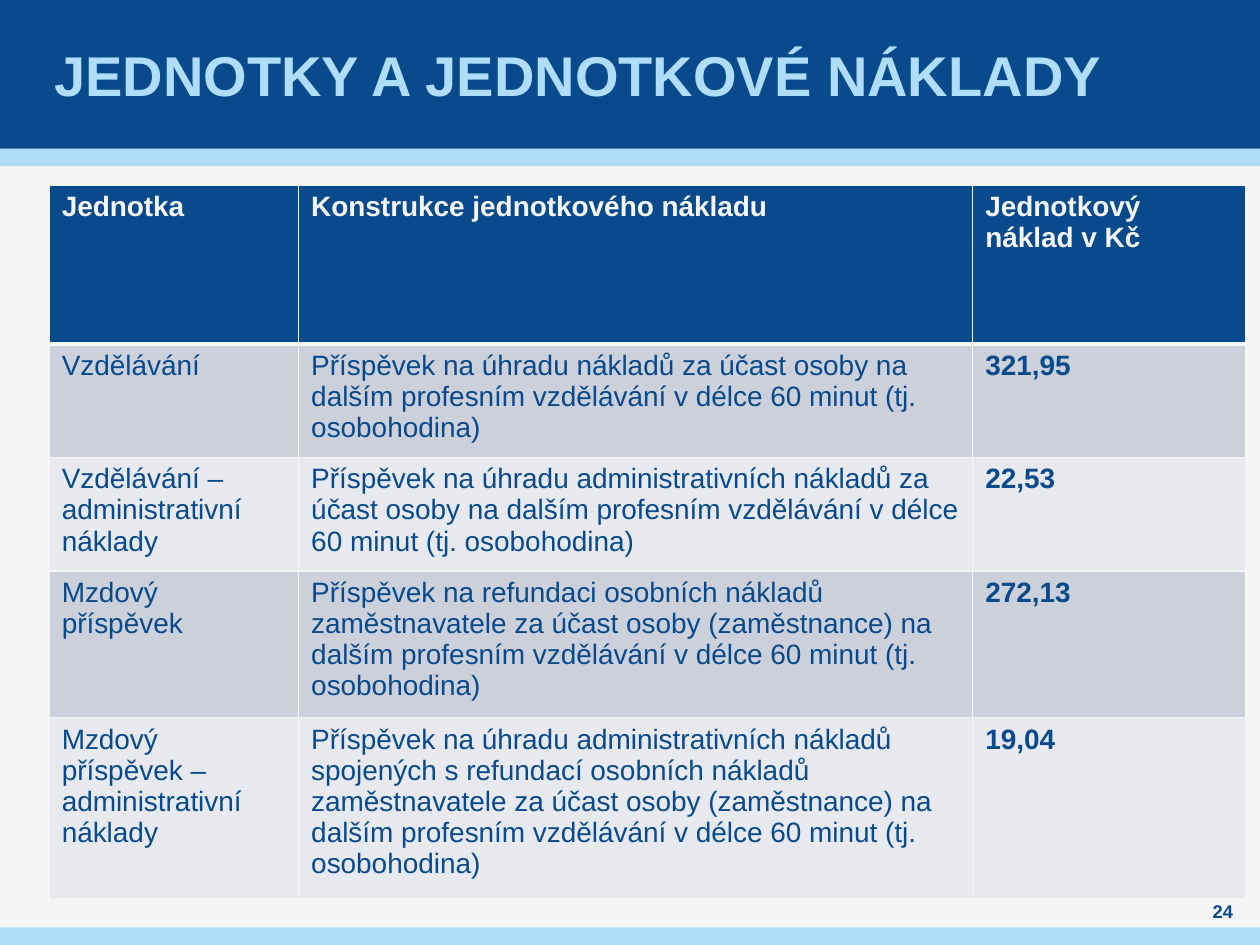
from lxml.etree import SubElement
from pptx import Presentation
from pptx.dml.color import RGBColor
from pptx.enum.shapes import MSO_SHAPE
from pptx.enum.text import MSO_ANCHOR, PP_ALIGN
from pptx.oxml.ns import qn
from pptx.util import Inches, Pt

NAVY = RGBColor(0x08, 0x4A, 0x8B)
SKY = RGBColor(0xAF, 0xDD, 0xFA)
PAPER = RGBColor(0xF5, 0xF5, 0xF5)
BAND_DARK = RGBColor(0xCC, 0xD0, 0xDA)
BAND_LIGHT = RGBColor(0xE7, 0xE9, 0xEE)

COL_WIDTHS = [1.98, 5.35, 2.17]
ROW_HEIGHTS = [1.26, 0.89, 0.89, 1.16, 1.42]
TRAINING = "dalším profesním vzdělávání v délce 60 minut (tj. osobohodina)"
ROWS = [
    ("Jednotka", "Konstrukce jednotkového nákladu", "Jednotkový náklad v Kč"),
    ("Vzdělávání",
     f"Příspěvek na úhradu nákladů za účast osoby na {TRAINING}",
     "321,95"),
    ("Vzdělávání – administrativní náklady",
     f"Příspěvek na úhradu administrativních nákladů za účast osoby na {TRAINING}",
     "22,53"),
    ("Mzdový příspěvek",
     "Příspěvek na refundaci osobních nákladů zaměstnavatele "
     f"za účast osoby (zaměstnance) na {TRAINING}",
     "272,13"),
    ("Mzdový příspěvek – administrativní náklady",
     "Příspěvek na úhradu administrativních nákladů spojených s refundací osobních "
     f"nákladů zaměstnavatele za účast osoby (zaměstnance) na {TRAINING}",
     "19,04"),
]


def add_bar(s, top, height, color):
    bar = s.shapes.add_shape(MSO_SHAPE.RECTANGLE, 0, Inches(top), Inches(10), Inches(height))
    bar.shadow.inherit = False
    bar.fill.solid()
    bar.fill.fore_color.rgb = color
    bar.line.fill.background()


def add_run(p, text, size, color, bold):
    r = p.add_run()
    r.text = text
    r.font.name = "Arial"
    r.font.size = Pt(size)
    r.font.bold = bold
    r.font.color.rgb = color


def add_label(s, box, text, size, color, align, inset=0):
    tf = s.shapes.add_textbox(*map(Inches, box)).text_frame
    tf.word_wrap = True
    tf.vertical_anchor = MSO_ANCHOR.MIDDLE
    tf.margin_left = tf.margin_right = Inches(inset)
    tf.margin_top = tf.margin_bottom = 0
    p = tf.paragraphs[0]
    p.alignment = align
    add_run(p, text, size, color, True)


def set_borders(cell, widths):
    """Draw cell borders; must run before the fill is set, to keep the XML order."""
    tc_pr = cell._tc.get_or_add_tcPr()
    for side, width in widths.items():
        ln = SubElement(tc_pr, qn(f"a:ln{side}"), w=str(Pt(width)))
        fill = SubElement(ln, qn("a:solidFill"))
        SubElement(fill, qn("a:srgbClr"), val=str(PAPER))


def add_cost_table(s):
    frame = s.shapes.add_table(len(ROWS), len(COL_WIDTHS), Inches(0.39), Inches(1.47),
                               Inches(sum(COL_WIDTHS)), Inches(sum(ROW_HEIGHTS)))
    table = frame.table
    for column, width in zip(table.columns, COL_WIDTHS):
        column.width = Inches(width)
    for i, (row, height, texts) in enumerate(zip(table.rows, ROW_HEIGHTS, ROWS)):
        row.height = Inches(height)
        header = i == 0
        fill = NAVY if header else BAND_DARK if i % 2 else BAND_LIGHT
        for j, (cell, text) in enumerate(zip(row.cells, texts)):
            set_borders(cell, {"L": 1, "R": 1, "T": 3 if i == 1 else 1, "B": 3 if header else 1})
            cell.fill.solid()
            cell.fill.fore_color.rgb = fill
            add_run(cell.text_frame.paragraphs[0], text, 16,
                    PAPER if header else NAVY, header or j == 2)


def main():
    prs = Presentation()
    prs.slide_width, prs.slide_height = Inches(10), Inches(7.5)
    s = prs.slides.add_slide(prs.slide_layouts[6])
    s.background.fill.solid()
    s.background.fill.fore_color.rgb = PAPER

    add_bar(s, 1.18, 0.14, SKY)
    add_bar(s, 0, 1.18, NAVY)
    add_bar(s, 7.36, 0.14, SKY)
    add_label(s, (0.39, 0, 9.21, 1.18), "JEDNOTKY A JEDNOTKOVÉ NÁKLADY",
              32, SKY, PP_ALIGN.LEFT, inset=0.04)
    add_cost_table(s)
    add_label(s, (9.45, 7.13, 0.51, 0.2), "24", 10.5, NAVY, PP_ALIGN.CENTER)
    prs.save("out.pptx")


if __name__ == "__main__":
    main()
